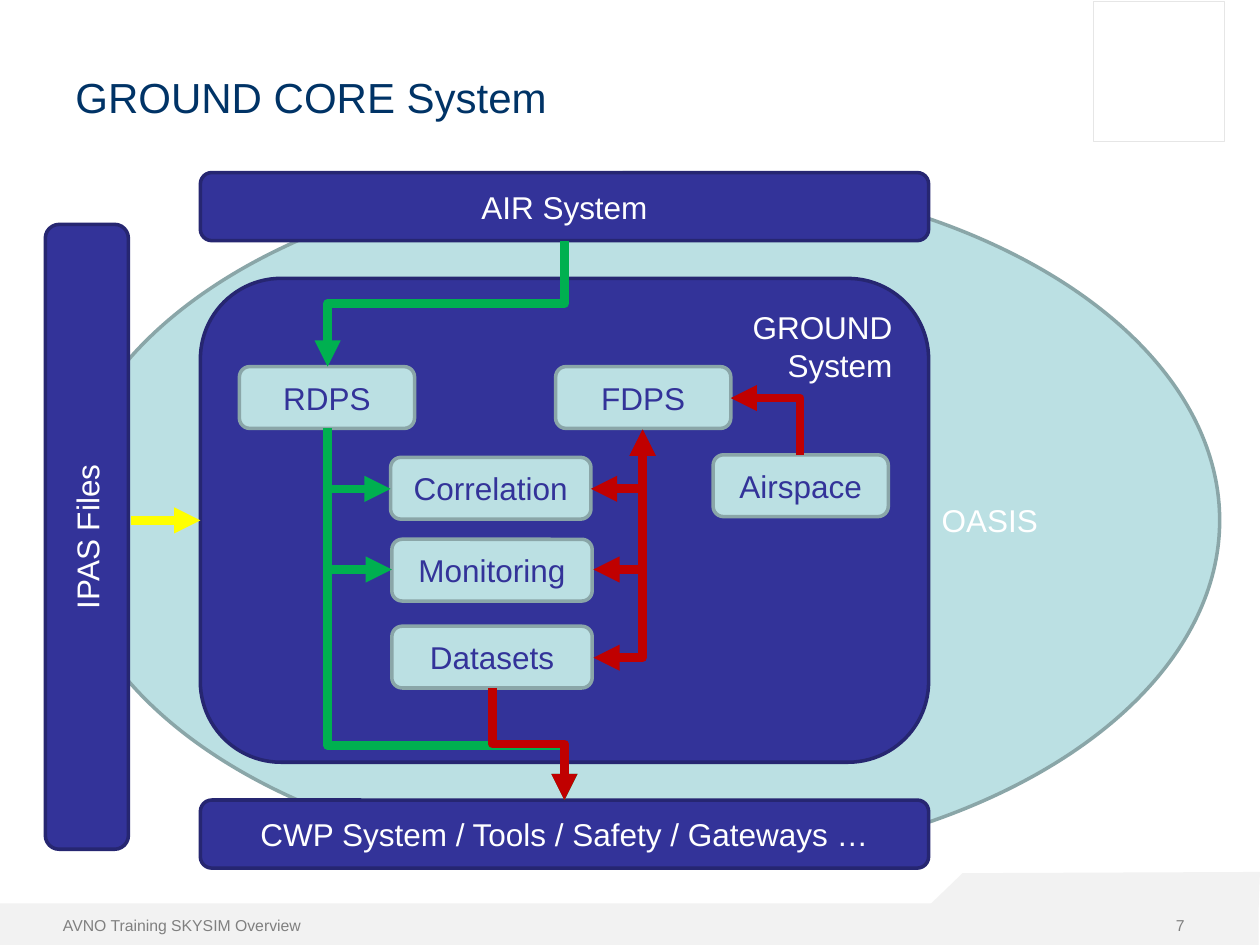
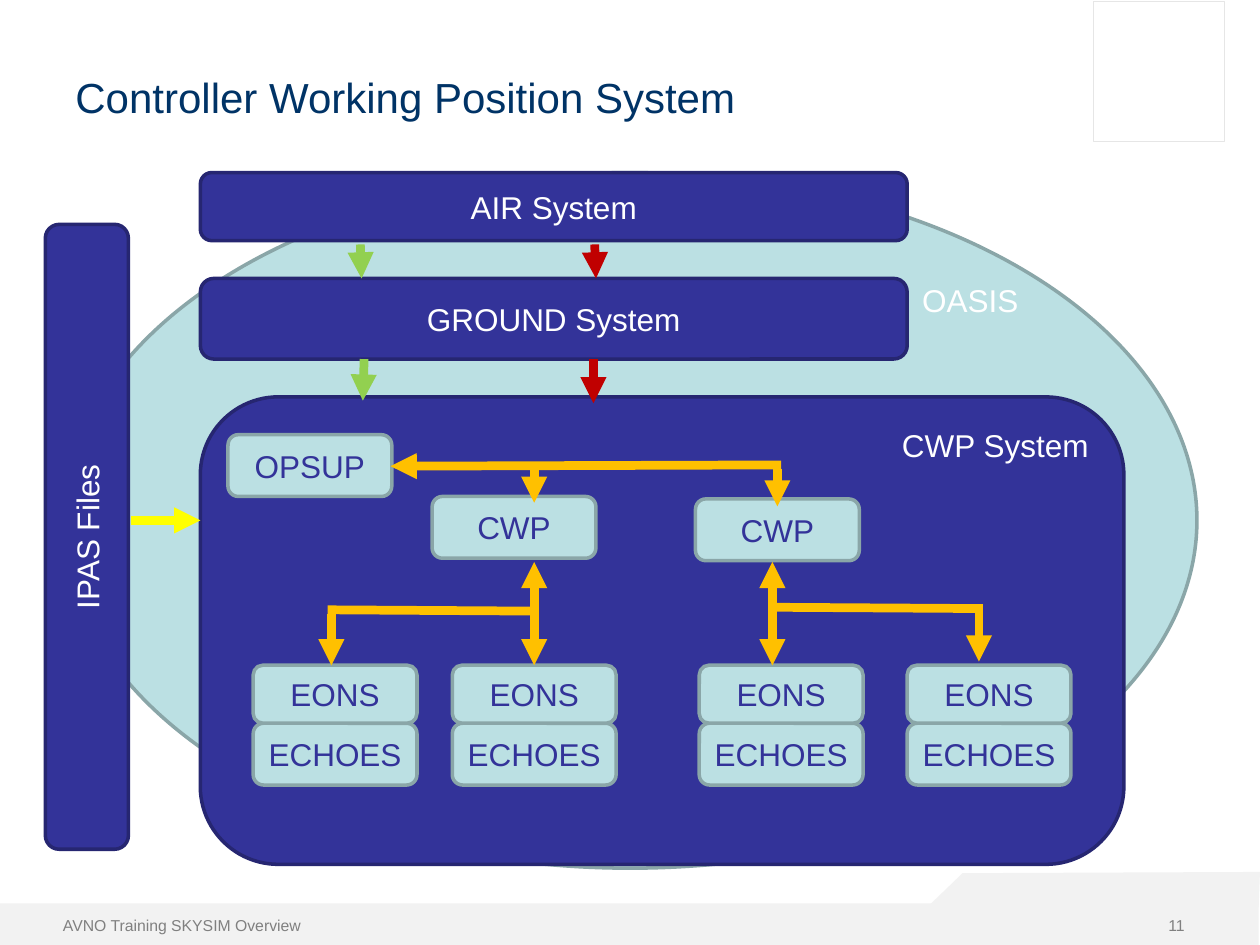
import pptx
import pptx.util
import pptx.dml.color
import pptx.enum.dml
import pptx.enum.shapes
import pptx.enum.text
import pptx.oxml.ns
from dataclasses import dataclass
from lxml import etree

Inches = pptx.util.Inches
Pt = pptx.util.Pt
qn = pptx.oxml.ns.qn
KIND = pptx.enum.shapes.MSO_SHAPE
LINK = pptx.enum.shapes.MSO_CONNECTOR
ALIGN = pptx.enum.text.PP_ALIGN
ANCHOR = pptx.enum.text.MSO_ANCHOR
DOTS = pptx.enum.dml.MSO_LINE.ROUND_DOT


@dataclass(frozen=True)
class Theme:
    font: str = "Arial"
    title: str = "003366"
    band: str = "F2F2F2"
    frame: str = "E6E6E6"
    foot: str = "808080"
    white: str = "FFFFFF"
    navy: str = "333399"
    deep: str = "262671"
    pale: str = "BBE0E3"
    grey: str = "8AA6A8"
    green: str = "00B050"
    lime: str = "92D050"
    red: str = "C00000"
    gold: str = "FFC000"
    yellow: str = "FFFF00"
    head_size: int = 24
    body_size: int = 18
    foot_size: int = 9
    edge: int = 2
    flow: int = 5


T = Theme()


def rgb(code):
    return pptx.dml.color.RGBColor.from_string(code)


# Text and shapes
def write(shape, text, size, color, align, anchor):
    frame = shape.text_frame
    frame.word_wrap = True
    frame.vertical_anchor = anchor
    frame.text = text
    for para in frame.paragraphs:
        para.alignment = align
        for run in para.runs:
            run.font.name = T.font
            run.font.size = Pt(size)
            run.font.color.rgb = rgb(color)
    return frame


def label(slide, at, text, size, color, align=ALIGN.LEFT, anchor=ANCHOR.MIDDLE):
    shape = slide.shapes.add_textbox(*map(Inches, at))
    return write(shape, text, size, color, align, anchor)


def paint(shape, fill, line=None, width=T.edge):
    shape.shadow.inherit = False
    shape.fill.solid()
    shape.fill.fore_color.rgb = rgb(fill)
    if line:
        shape.line.color.rgb = rgb(line)
        shape.line.width = Pt(width)
    else:
        shape.line.fill.background()


def block(slide, at, text, dark=True, kind=KIND.ROUNDED_RECTANGLE,
          ink=T.white, align=ALIGN.CENTER, anchor=ANCHOR.MIDDLE):
    shape = slide.shapes.add_shape(kind, *map(Inches, at))
    if dark:
        paint(shape, T.navy, T.deep)
    else:
        paint(shape, T.pale, T.grey)
    write(shape, text, T.body_size, ink, align, anchor)
    return shape


def unit(slide, x, y, text, width=1.3, height=0.49):
    block(slide, (x, y, width, height), text, dark=False, ink=T.navy)


def oval(slide, width, anchor):
    block(slide, (0.5, 1.37, width, 5.52), "OASIS", dark=False,
          kind=KIND.OVAL, align=ALIGN.RIGHT, anchor=anchor)


# Lines and arrows
def style(link, color, ends, dash=None):
    link.line.color.rgb = rgb(color)
    link.line.width = Pt(T.flow)
    if dash:
        link.line.dash_style = dash
    props = link.element.spPr
    line = props.find(qn("a:ln"))
    etree.SubElement(line, qn("a:round"))
    for end in ("head", "tail"):
        if end in ends:
            etree.SubElement(line, qn(f"a:{end}End"), type="triangle")
    etree.SubElement(props, qn("a:effectLst"))


def arrow(slide, start, end, color, ends=("tail",), dash=None):
    link = slide.shapes.add_connector(
        LINK.STRAIGHT, *map(Inches, start + end))
    style(link, color, ends, dash)


def elbow(slide, start, end, color, ends=("tail",), turn=None):
    """Leave upright; turn is the share of the rise before a second bend."""
    (x1, y1), (x2, y2) = start, end
    wide, high = abs(y2 - y1), abs(x2 - x1)
    left, top = (x1 + x2 - wide) / 2, (y1 + y2 - high) / 2
    link = slide.shapes.add_connector(
        LINK.ELBOW, *map(Inches, (left, top, left + wide, top + high)))
    props = link.element.spPr
    form = props.find(qn("a:xfrm"))
    down, right = y2 > y1, x2 > x1
    form.set("rot", str((90 if down and not right else 270) * 60000))
    if down and right:
        form.set("flipH", "1")
    elif not down and not right:
        form.set("flipV", "1")
    shape = props.find(qn("a:prstGeom"))
    if turn is None:
        shape.set("prst", "bentConnector2")
    else:
        etree.SubElement(shape.find(qn("a:avLst")), qn("a:gd"),
                         name="adj1", fmla=f"val {round(turn * 100000)}")
    style(link, color, ends)


# Parts shared by both slides
def base(deck, title, number):
    slide = deck.slides.add_slide(deck.slide_layouts[6])
    band = slide.shapes.add_shape(
        KIND.RECTANGLE, *map(Inches, (0, 7.17, 9.99, 0.33)))
    paint(band, T.band)
    pen = slide.shapes.build_freeform(Inches(7.37), Inches(7.19))
    pen.add_line_segments([(Inches(x), Inches(y)) for x, y in
                           ((9.99, 7.2), (10, 6.92), (7.64, 6.93))])
    paint(pen.convert_to_shape(), T.band)
    badge = slide.shapes.add_shape(
        KIND.RECTANGLE, *map(Inches, (8.68, 0.01, 1.04, 1.11)))
    paint(badge, T.white, T.frame, 0.25)
    label(slide, (0.5, 0.52, 7.48, 0.85), title, T.head_size,
          T.title, anchor=ANCHOR.TOP)
    foot = label(slide, (0.5, 7.19, 4.56, 0.3),
                 "AVNO Training SKYSIM Overview", T.foot_size, T.foot)
    foot.margin_left = 0
    label(slide, (8.98, 7.19, 0.52, 0.3), number, T.foot_size, T.foot,
          ALIGN.RIGHT)
    return slide


def feed(slide):
    files = block(slide, (-1.79, 3.93, 4.96, 0.66), "IPAS Files")
    files.rotation = 270
    arrow(slide, (1.04, 4.13), (1.59, 4.13), T.yellow)


def ground(deck):
    slide = base(deck, "GROUND CORE System", "7")
    oval(slide, 9.18, ANCHOR.MIDDLE)
    block(slide, (1.59, 1.37, 5.78, 0.54), "AIR System")
    block(slide, (1.59, 6.35, 5.78, 0.54),
          "CWP System / Tools / Safety / Gateways …")
    block(slide, (1.59, 2.21, 5.78, 3.84), "GROUND\vSystem",
          align=ALIGN.RIGHT, anchor=ANCHOR.TOP)
    feed(slide)

    # Processing units
    for x, y, text in ((1.9, 2.91, "RDPS"), (4.41, 2.91, "FDPS"),
                       (5.66, 3.61, "Airspace")):
        unit(slide, x, y, text, 1.39)
    for x, y, text in ((3.1, 3.63, "Correlation"), (3.11, 4.28, "Monitoring"),
                       (3.11, 4.97, "Datasets")):
        unit(slide, x, y, text, 1.59)

    # Radar flow
    radar = (2.6, 3.4)
    elbow(slide, (4.48, 1.91), (2.6, 2.91), T.green, turn=0.5)
    elbow(slide, radar, (4.48, 6.35), T.green, turn=0.853)
    for end in ((3.1, 3.88), (3.11, 4.52)):
        elbow(slide, radar, end, T.green)

    # Flight plan flow
    elbow(slide, (6.35, 3.61), (5.8, 3.16), T.red)
    for end in ((4.69, 3.88), (4.71, 4.52), (4.71, 5.22)):
        elbow(slide, (5.1, 3.41), end, T.red, ("head", "tail"))
    elbow(slide, (3.91, 5.46), (4.48, 6.35), T.red, turn=0.5)


def control(deck):
    slide = base(deck, "Controller Working Position System", "11")
    oval(slide, 9, ANCHOR.TOP)
    block(slide, (1.59, 1.37, 5.61, 0.54), "AIR System")
    block(slide, (1.59, 3.15, 7.33, 3.71), "CWP System",
          align=ALIGN.RIGHT, anchor=ANCHOR.TOP)
    block(slide, (1.59, 2.21, 5.61, 0.64), "GROUND System")
    feed(slide)

    # Positions and their stacked tools
    unit(slide, 1.81, 3.45, "OPSUP")
    for x, y in ((3.43, 3.94), (5.52, 3.96)):
        unit(slide, x, y, "CWP")
    for x in (2.01, 3.59, 5.55, 7.2):
        unit(slide, x, 5.74, "ECHOES")
        unit(slide, x, 5.28, "EONS", height=0.46)

    # Flow between systems
    arrow(slide, (2.86, 1.94), (2.87, 2.21), T.lime)
    arrow(slide, (2.89, 2.85), (2.88, 3.18), T.lime)
    arrow(slide, (4.72, 1.94), (4.73, 2.21), T.red, dash=DOTS)
    arrow(slide, (4.71, 2.85), (4.71, 3.2), T.red)

    # Flow from supervisor to positions
    arrow(slide, (3.1, 3.7), (6.2, 3.69), T.gold, ("head",))
    arrow(slide, (4.24, 3.7), (4.24, 3.99), T.gold)
    arrow(slide, (6.17, 3.72), (6.17, 4.02), T.gold)

    # Flow from positions to tools
    for x in (4.24, 6.13):
        arrow(slide, (x, 5.28), (x, 4.46), T.gold, ("head", "tail"))
    for x, y in ((2.6, 4.84), (6.16, 4.82)):
        arrow(slide, (x, y), (x + 1.64, y + 0.01), T.gold, ())
    arrow(slide, (2.63, 4.87), (2.63, 5.28), T.gold)
    arrow(slide, (7.77, 4.84), (7.77, 5.25), T.gold)


def main():
    deck = pptx.Presentation()
    deck.slide_width, deck.slide_height = Inches(10), Inches(7.5)
    ground(deck)
    control(deck)
    deck.save("out.pptx")


if __name__ == "__main__":
    main()
